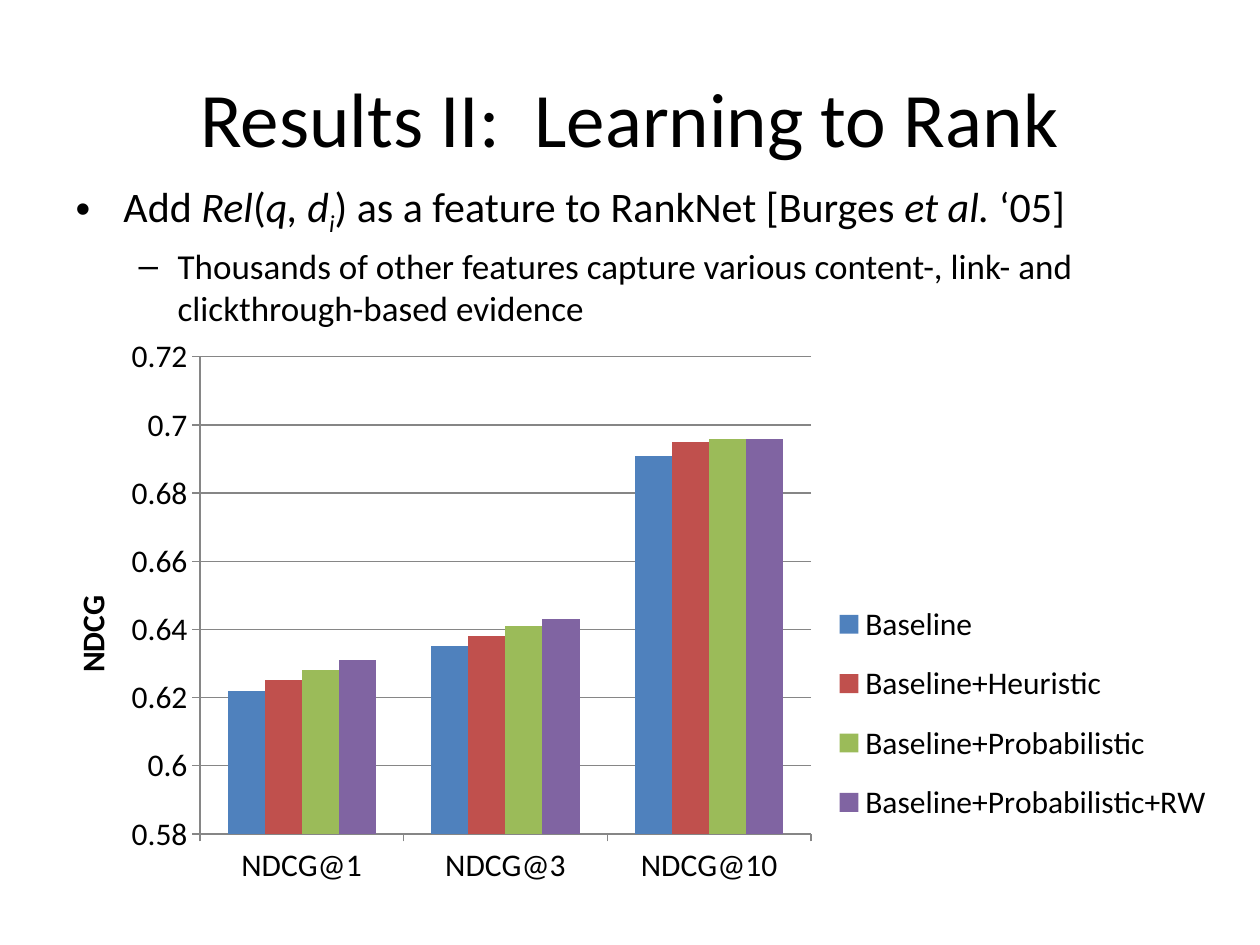
import pptx
import pptx.chart.data
import pptx.dml.color
import pptx.enum.chart
import pptx.enum.text
import pptx.oxml
import pptx.oxml.ns
import pptx.util
from pptx.util import Inches

RGBColor = pptx.dml.color.RGBColor
BLACK = RGBColor(0x00, 0x00, 0x00)
GRAY = RGBColor(0x86, 0x86, 0x86)
BLUE = RGBColor(0x4F, 0x81, 0xBD)
RED = RGBColor(0xC0, 0x50, 0x4D)
GREEN = RGBColor(0x9B, 0xBB, 0x59)
PURPLE = RGBColor(0x80, 0x64, 0xA2)
FONT = "Calibri"

CUTOFFS = ["NDCG@1", "NDCG@3", "NDCG@10"]
RANKERS = [
    ("Baseline", (0.622, 0.635, 0.691), BLUE),
    ("Baseline+Heuristic", (0.625, 0.638, 0.695), RED),
    ("Baseline+Probabilistic", (0.628, 0.641, 0.696), GREEN),
    ("Baseline+Probabilistic+RW", (0.631, 0.643, 0.696), PURPLE),
]
FEATURE_RUNS = [
    ("Add ", {}),
    ("Rel", {"italic": True}),
    ("(", {}),
    ("q, d", {"italic": True}),
    ("i", {"italic": True, "baseline": -25}),
    (") as a feature to RankNet [Burges ", {}),
    ("et al. ", {"italic": True}),
    ("‘05]", {}),
]
EVIDENCE = ("Thousands of other features capture various content-, link- and "
            "clickthrough-based evidence")


def style_font(font, size, bold=False, italic=False):
    font.name = FONT
    font.size = pptx.util.Pt(size)
    font.bold = bold
    font.italic = italic
    font.color.rgb = BLACK


def add_text(paragraph, text, size, bold=False, italic=False, baseline=0):
    run = paragraph.add_run()
    run.text = text
    style_font(run.font, size, bold, italic)
    if baseline:
        run.font._element.set("baseline", str(baseline * 1000))


def place(shape, box):
    shape.left, shape.top, shape.width, shape.height = box


def set_bullet(paragraph, mark, margin, hanging):
    properties = paragraph._p.get_or_add_pPr()
    properties.set("marL", str(margin))
    properties.set("indent", str(-hanging))
    bullet = pptx.oxml.parse_xml(
        f'<a:buChar {pptx.oxml.ns.nsdecls("a")} char="{mark}"/>')
    properties.append(bullet)


def set_layout(element, position, fractions, inner=False):
    """Fix a chart part at x, y, w, h, given as fractions of the chart."""
    qn = pptx.oxml.ns.qn
    for old in element.findall(qn("c:layout")):
        element.remove(old)
    target = '<c:layoutTarget val="inner"/>' if inner else ""
    modes = "".join(f'<c:{axis}Mode val="edge"/>' for axis in "xy")
    sizes = "".join(f'<c:{side} val="{value}"/>'
                    for side, value in zip("xywh", fractions))
    element.insert(position, pptx.oxml.parse_xml(
        f'<c:layout {pptx.oxml.ns.nsdecls("c")}><c:manualLayout>'
        f'{target}{modes}{sizes}</c:manualLayout></c:layout>'))


def fill_title(title, box):
    place(title, box)
    frame = title.text_frame
    frame.vertical_anchor = pptx.enum.text.MSO_ANCHOR.MIDDLE
    heading = frame.paragraphs[0]
    heading.alignment = pptx.enum.text.PP_ALIGN.CENTER
    add_text(heading, "Results II:  Learning to Rank", 44)


def fill_body(body, box):
    place(body, box)
    frame = body.text_frame
    frame.auto_size = pptx.enum.text.MSO_AUTO_SIZE.NONE
    feature = frame.paragraphs[0]
    set_bullet(feature, "•", Inches(0.38), Inches(0.38))
    for text, style in FEATURE_RUNS:
        add_text(feature, text, 24, **style)
    evidence = frame.add_paragraph()
    evidence.level = 1
    set_bullet(evidence, "–", Inches(0.81), Inches(0.31))
    add_text(evidence, EVIDENCE, 20)


def format_axes(chart):
    scores = chart.value_axis
    scores.minimum_scale, scores.maximum_scale = 0.58, 0.72
    scores.major_unit = 0.02
    scores.tick_labels.number_format = "General"
    scores.tick_labels.number_format_is_linked = False
    scores.has_major_gridlines = True
    for line in (scores.format.line, chart.category_axis.format.line,
                 scores.major_gridlines.format.line):
        line.color.rgb = GRAY
        line.width = pptx.util.Pt(0.75)
    for axis in (scores, chart.category_axis):
        axis.major_tick_mark = pptx.enum.chart.XL_TICK_MARK.OUTSIDE
    scores.has_title = True
    caption = scores.axis_title.text_frame
    add_text(caption.paragraphs[0], "NDCG", 18, bold=True)
    body = caption._txBody.find(pptx.oxml.ns.qn("a:bodyPr"))
    body.set("rot", "-5400000")
    body.set("vert", "horz")
    set_layout(scores.axis_title._element, 1, (0.01, 0.45))


def add_ndcg_chart(slide, box):
    data = pptx.chart.data.CategoryChartData()
    data.categories = CUTOFFS
    for name, values, _ in RANKERS:
        data.add_series(name, values)
    chart = slide.shapes.add_chart(
        pptx.enum.chart.XL_CHART_TYPE.COLUMN_CLUSTERED, *box, data).chart
    style_font(chart.font, 18)
    chart.has_title = False
    format_axes(chart)

    columns = chart.plots[0]
    columns.gap_width, columns.overlap = 150, 0
    columns.vary_by_categories = False
    for series, (_, _, color) in zip(columns.series, RANKERS):
        series.format.fill.solid()
        series.format.fill.fore_color.rgb = color

    chart.has_legend = True
    chart.legend.position = pptx.enum.chart.XL_LEGEND_POSITION.RIGHT
    chart.legend.include_in_layout = False
    style_font(chart.legend.font, 18)
    set_layout(chart.legend._element, 1, (0.66, 0.44, 0.33, 0.44))
    plot_area = chart.element.find(".//" + pptx.oxml.ns.qn("c:plotArea"))
    set_layout(plot_area, 0, (0.125, 0.054, 0.52, 0.811), inner=True)


def main():
    deck = pptx.Presentation()
    deck.slide_width, deck.slide_height = Inches(10), Inches(7.5)
    slide = deck.slides.add_slide(deck.slide_layouts[1])
    left, width = Inches(0.5), Inches(9)
    fill_title(slide.shapes.title, (left, Inches(0.3), width, Inches(1.25)))
    fill_body(slide.placeholders[1],
              (left, Inches(1.38), width, Inches(4.95)))
    add_ndcg_chart(slide, (Inches(0.42), Inches(2.58),
                           Inches(9.33), Inches(4.67)))
    deck.save("out.pptx")


if __name__ == "__main__":
    main()
